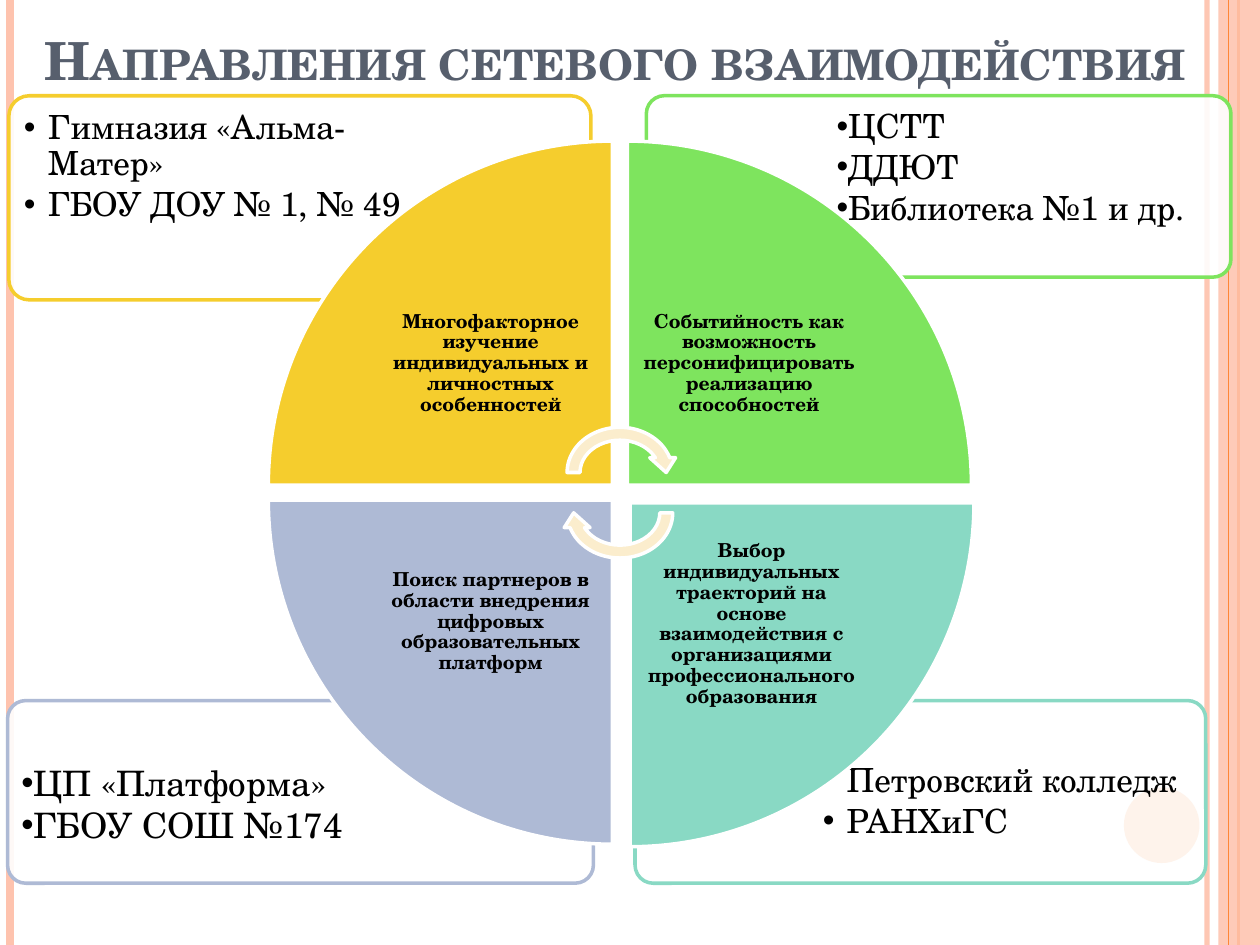
from pptx import Presentation
from pptx.dml.color import RGBColor
from pptx.enum.shapes import MSO_CONNECTOR, MSO_SHAPE
from pptx.enum.text import MSO_ANCHOR, MSO_AUTO_SIZE, PP_ALIGN
from pptx.oxml.ns import qn
from pptx.util import Inches, Pt
from lxml.etree import SubElement

FONT = "TeX Gyre Schola"
COLORS = {
    "white": "FFFFFF", "black": "000000", "title": "575F6D",
    "orange": "FE8637", "peach": "FEC3AE", "cream": "FBEDCD",
    "yellow": "F5CD2D", "green": "7EE45E", "teal": "89D9C4", "blue": "AEBAD5",
}

# Colour, card, list box, inset, size, indent, items
CARDS = [
    ("teal", (5.04, 5.56, 4.53, 1.45), (6.43, 5.96, 3.11, 1.02), 0.1, 19, 0.19,
     ["Петровский колледж", "РАНХиГС"]),
    ("blue", (0.06, 5.56, 4.65, 1.45), (0.09, 5.96, 3.19, 1.02), 0.08, 20, 0,
     ["ЦП «Платформа»", "ГБОУ СОШ №174"]),
    ("green", (5.13, 0.76, 4.64, 1.44), (6.56, 0.79, 3.19, 1.02), 0.08, 19, 0,
     ["ЦСТТ", "ДДЮТ", "Библиотека №1 и др."]),
    ("yellow", (0.07, 0.76, 4.62, 1.62), (0.11, 0.8, 3.16, 1.15), 0.08, 19, 0.19,
     ["Гимназия «Альма-Матер»", "ГБОУ ДОУ № 1, № 49"]),
]

# Colour, left, top, rotation, label
WEDGES = [
    ("yellow", 2.13, 1.12, 0,
     "Многофакторное изучение индивидуальных и личностных особенностей"),
    ("green", 4.98, 1.12, 90,
     "Событийность как возможность персонифицировать реализацию способностей"),
    ("teal", 5, 3.99, 180,
     "Выбор индивидуальных траекторий на основе взаимодействия с "
     "организациями профессионального образования"),
    ("blue", 2.13, 3.97, 270,
     "Поиск партнеров в области внедрения цифровых образовательных платформ"),
]
WEDGE, LABEL = 2.73, 1.93


def rgb(name):
    return RGBColor.from_string(COLORS[name])


def fade(fill, pct):
    color = fill._xPr.find(qn("a:solidFill"))[0]
    SubElement(color, qn("a:alpha"), val=str(pct * 1000))


def add_line(slide, x, color, width, pct=None):
    line = slide.shapes.add_connector(
        MSO_CONNECTOR.STRAIGHT, Inches(x), 0, Inches(x), Inches(7.5))
    line.line.color.rgb = rgb(color)
    line.line.width = Pt(width)
    SubElement(line._element.spPr, qn("a:effectLst"))
    if pct:
        fade(line.line.fill, pct)


def add_shape(slide, kind, area, fill, line=None, turn=0, pct=None):
    shape = slide.shapes.add_shape(kind, *map(Inches, area))
    shape.shadow.inherit = False
    shape.rotation = turn
    shape.fill.solid()
    shape.fill.fore_color.rgb = rgb(fill)
    if pct:
        fade(shape.fill, pct)
    if line:
        shape.line.color.rgb = rgb(line)
        shape.line.width = Pt(2)
    else:
        shape.line.fill.background()
    return shape


def place(box, area):
    box.left, box.top, box.width, box.height = map(Inches, area)


def set_frame(frame, inset, anchor):
    frame.word_wrap = True
    frame.auto_size = MSO_AUTO_SIZE.NONE
    frame.vertical_anchor = anchor
    frame.margin_left = frame.margin_right = Inches(inset)
    frame.margin_top = frame.margin_bottom = Inches(inset)


def style(par, size, color="black", bold=False):
    for run in par.runs:
        font = run.font
        font.name, font.size, font.bold = FONT, Pt(size), bold
        font.color.rgb = rgb(color)


def add_bullet(par, indent):
    props = par._p.get_or_add_pPr()
    props.set("marL", str(Inches(indent)))
    props.set("indent", str(-Inches(indent)))
    SubElement(props, qn("a:buFont"), typeface="Arial")
    SubElement(props, qn("a:buChar"), char="•")


def fill_list(slide, box, area, inset, size, indent, items):
    slide.shapes._spTree.append(box._element)  # raise above its card
    place(box, area)
    frame = box.text_frame
    set_frame(frame, inset, MSO_ANCHOR.TOP)
    frame.text = "\n".join(items)
    tight = size < 20
    for par in frame.paragraphs:
        add_bullet(par, indent)
        par.alignment = PP_ALIGN.LEFT
        par.line_spacing = 0.9 if tight else 1.0
        par.space_before = Pt(0)
        par.space_after = Pt(2.85 if tight else 0)
        style(par, size)


def add_label(slide, left, top, text):
    box = slide.shapes.add_textbox(*map(Inches, (left, top, LABEL, LABEL)))
    set_frame(box.text_frame, 0.09, MSO_ANCHOR.MIDDLE)
    par = box.text_frame.paragraphs[0]
    par.text = text
    par.alignment = PP_ALIGN.CENTER
    par.line_spacing = 0.9
    style(par, 11, bold=True)


def set_title(title, text):
    place(title, (0.2, 0.13, 9.37, 0.64))
    frame = title.text_frame
    set_frame(frame, 0.05, MSO_ANCHOR.BOTTOM)
    frame.text = text
    par = frame.paragraphs[0]
    par.alignment = PP_ALIGN.CENTER
    style(par, 30, "title", True)
    par.runs[0].font._element.set("cap", "small")


def main():
    deck = Presentation()
    deck.slide_width, deck.slide_height = Inches(10), Inches(7.5)
    slide = deck.slides.add_slide(deck.slide_layouts[4])
    title, *bodies = list(slide.placeholders)

    # Side stripes and dot
    add_line(slide, 9.58, "peach", 3, 93)
    add_line(slide, 0.08, "peach", 4.5)
    add_line(slide, 9.83, "orange", 1.5)
    add_shape(slide, MSO_SHAPE.RECTANGLE, (9.67, 0, 0.33, 7.5), "peach", pct=87)
    add_line(slide, 9.75, "orange", 0.75)
    add_shape(slide, MSO_SHAPE.OVAL, (8.92, 6.25, 0.6, 0.6), "orange")

    set_title(title, "Направления сетевого взаимодействия")

    # Corner cards with lists
    for body, (color, card, area, inset, size, indent, items) in zip(bodies, CARDS):
        shape = add_shape(slide, MSO_SHAPE.ROUNDED_RECTANGLE, card, "white", color, pct=90)
        shape.adjustments[0] = 0.1
        fill_list(slide, body, area, inset, size, indent, items)

    # Circle of four wedges, labels towards the centre
    shift = WEDGE - LABEL
    for color, left, top, turn, text in WEDGES:
        add_shape(slide, MSO_SHAPE.PIE_WEDGE, (left, top, WEDGE, WEDGE),
                  color, "white", turn)
        add_label(slide, left + shift * (turn in (0, 270)),
                  top + shift * (turn in (0, 90)), text)

    # Cycle arrows
    for top, turn in ((3.34, 0), (3.66, 180)):
        add_shape(slide, MSO_SHAPE.CIRCULAR_ARROW, (4.45, top, 0.94, 0.82),
                  "cream", "white", turn)

    deck.save("out.pptx")


if __name__ == "__main__":
    main()
